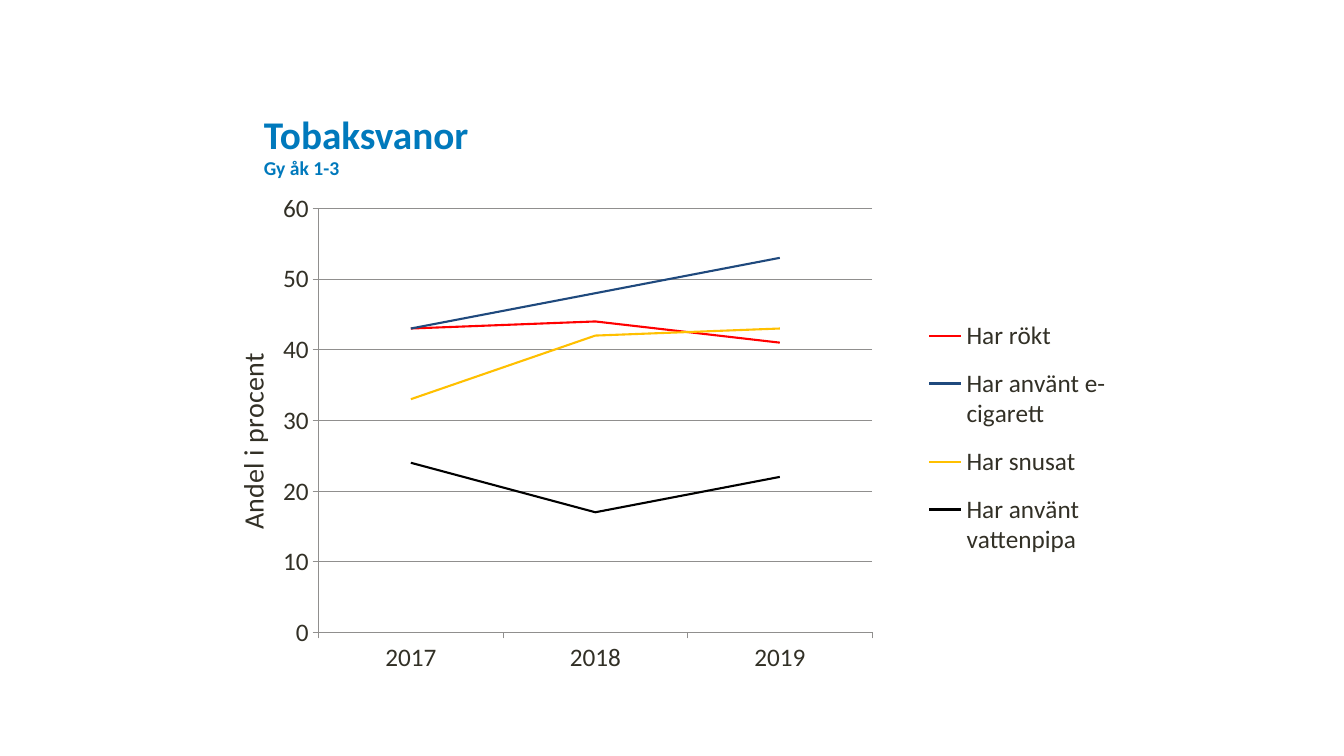
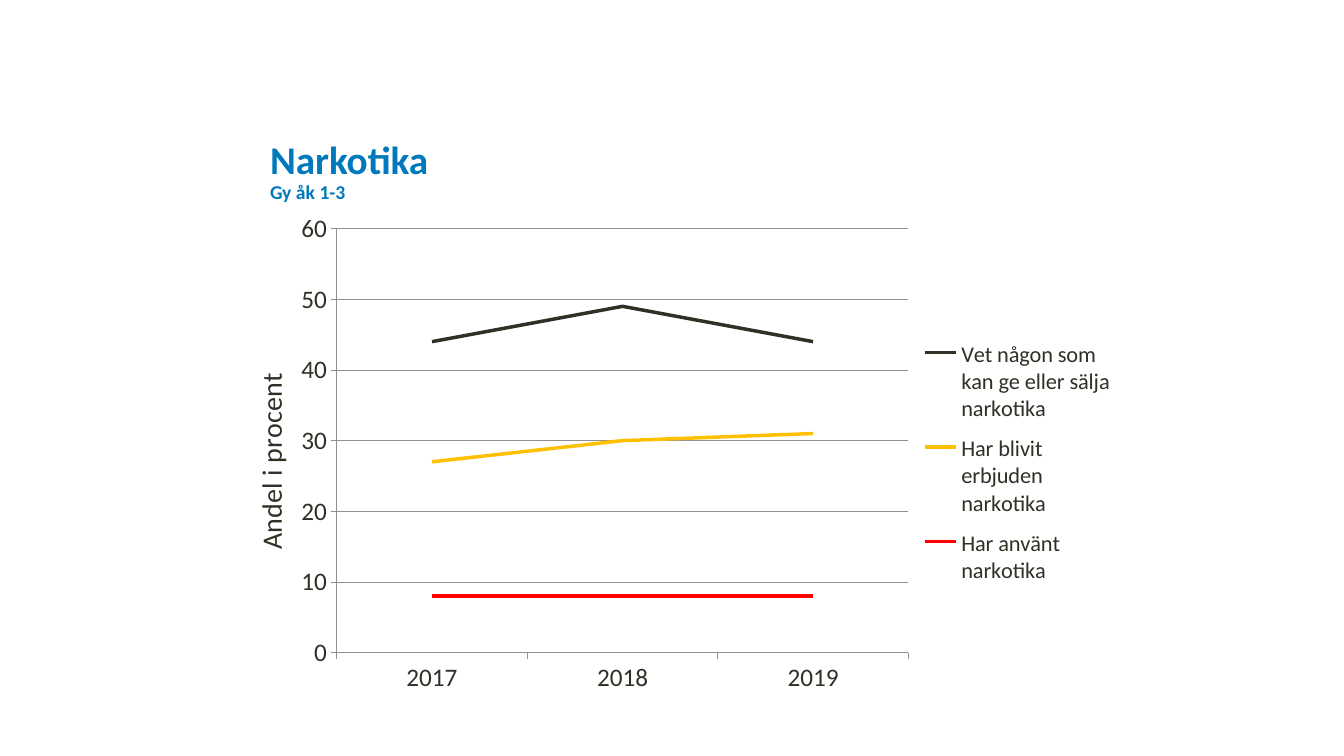
from dataclasses import dataclass

from lxml.etree import SubElement
from pptx import Presentation
from pptx.chart.data import CategoryChartData
from pptx.dml.color import RGBColor
from pptx.enum.chart import XL_CHART_TYPE as ChartType
from pptx.enum.chart import XL_LEGEND_POSITION as LegendPosition
from pptx.enum.chart import XL_MARKER_STYLE as MarkerStyle
from pptx.enum.chart import XL_TICK_MARK as TickMark
from pptx.enum.text import MSO_ANCHOR as Anchor
from pptx.oxml import parse_xml
from pptx.oxml.ns import nsdecls, qn
from pptx.util import Inches, Pt

YEARS = ("2017", "2018", "2019")
SUBTITLE = "Gy åk 1-3"
AXIS_TITLE = "Andel i procent"


@dataclass(frozen=True)
class Theme:
    font: str = "Calibri"
    heading: str = "0079BC"
    text: str = "323026"
    grid: str = "908F8E"
    red: str = "FF0000"
    blue: str = "1F497D"
    yellow: str = "FFC000"
    black: str = "000000"
    title_size: int = 28
    subtitle_size: int = 14
    axis_size: int = 18
    axis_title_size: int = 20
    grid_width: float = 0.5


THEME = Theme()

# Positions inside a chart are fractions of the chart's size.
SLIDES = [
    {
        "title": "Tobaksvanor",
        "title_at": (2.52, 0.58, 9, 1.25),
        "chart_at": (2.17, 1.82, 9, 4.95),
        "plot": (0.11, 0.05, 0.61, 0.85),
        "axis_title": (0.01, 0.33),
        "legend": (0.78, 0.24, 0.2, 0.54),
        "legend_size": 18,
        "line_width": 1.5,
        "series": [
            ("Har rökt", (43, 44, 41), THEME.red),
            ("Har använt e-cigarett", (43, 48, 53), THEME.blue),
            ("Har snusat", (33, 42, 43), THEME.yellow),
            ("Har använt vattenpipa", (24, 17, 22), THEME.black),
        ],
    },
    {
        "title": "Narkotika",
        "title_at": (2.58, 0.82, 9, 1.25),
        "chart_at": (2.17, 2.07, 9, 4.95),
        "plot": (0.13, 0.04, 0.63, 0.85),
        "axis_title": (0.03, 0.32),
        "legend": (0.77, 0.24, 0.22, 0.54),
        "legend_size": 16,
        "line_width": 2.5,
        "series": [
            ("Vet någon som kan ge eller sälja narkotika", (44, 49, 44), THEME.text),
            ("Har blivit erbjuden narkotika", (27, 30, 31), THEME.yellow),
            ("Har använt narkotika", (8, 8, 8), THEME.red),
        ],
    },
]


def set_format(target, values):
    for name, value in values.items():
        setattr(target, name, value)


def set_font(font, size, color=THEME.text, bold=False):
    set_format(font, {"name": THEME.font, "size": Pt(size), "bold": bold})
    font.color.rgb = RGBColor.from_string(color)


def set_line(line, color, width):
    line.color.rgb = RGBColor.from_string(color)
    line.width = Pt(width)


def set_layout(element, index, place, inner=False):
    """Give a chart part a fixed place, as child number index of its element."""
    for old in element.findall(qn("c:layout")):
        element.remove(old)
    layout = parse_xml(f"<c:layout {nsdecls('c')}/>")
    manual = SubElement(layout, qn("c:manualLayout"))
    settings = [("layoutTarget", "inner")] if inner else []
    settings += [("xMode", "edge"), ("yMode", "edge")]
    settings += zip("xywh", place)
    for name, value in settings:
        SubElement(manual, qn(f"c:{name}")).set("val", str(value))
    element.insert(index, layout)


def add_title(slide, content):
    box = slide.shapes.add_textbox(*map(Inches, content["title_at"]))
    frame = box.text_frame
    set_format(frame, {"word_wrap": True, "vertical_anchor": Anchor.BOTTOM})
    lines = ((content["title"], THEME.title_size), (SUBTITLE, THEME.subtitle_size))
    for number, (text, size) in enumerate(lines):
        paragraph = frame.add_paragraph() if number else frame.paragraphs[0]
        paragraph.line_spacing = 0.9
        run = paragraph.add_run()
        run.text = text
        set_font(run.font, size, THEME.heading, bold=True)


def style_axes(chart, content):
    for axis in (chart.category_axis, chart.value_axis):
        axis.major_tick_mark = TickMark.OUTSIDE
        axis.minor_tick_mark = TickMark.NONE
        set_font(axis.tick_labels.font, THEME.axis_size)
        set_line(axis.format.line, THEME.grid, THEME.grid_width)
    value_axis = chart.value_axis
    set_format(value_axis, {"minimum_scale": 0, "maximum_scale": 60,
                            "major_unit": 10, "has_major_gridlines": True})
    set_line(value_axis.major_gridlines.format.line, THEME.grid, THEME.grid_width)
    title = value_axis.axis_title
    title.text_frame.text = AXIS_TITLE
    set_font(title.text_frame.paragraphs[0].runs[0].font, THEME.axis_title_size)
    title_element = value_axis._element.find(qn("c:title"))
    set_layout(title_element, 1, content["axis_title"])


def add_line_chart(slide, content):
    data = CategoryChartData()
    data.categories = YEARS
    for name, values, _ in content["series"]:
        data.add_series(name, values)
    chart = slide.shapes.add_chart(
        ChartType.LINE, *map(Inches, content["chart_at"]), data).chart
    set_format(chart, {"has_title": False, "has_legend": True})
    set_font(chart.font, THEME.axis_size)
    plot = chart.plots[0]
    plot.vary_by_categories = False
    for series, (_, _, color) in zip(plot.series, content["series"]):
        series.smooth = False
        series.marker.style = MarkerStyle.NONE
        set_line(series.format.line, color, content["line_width"])
    style_axes(chart, content)

    legend = chart.legend
    set_format(legend, {"position": LegendPosition.RIGHT, "include_in_layout": False})
    set_font(legend.font, content["legend_size"])
    set_layout(legend._element, 1, content["legend"])
    plot_area = chart._chartSpace.chart.plotArea
    set_layout(plot_area, 0, content["plot"], inner=True)


def main():
    presentation = Presentation()
    set_format(presentation, {"slide_width": Inches(13.33), "slide_height": Inches(7.5)})
    blank = presentation.slide_layouts[6]
    for content in SLIDES:
        slide = presentation.slides.add_slide(blank)
        add_title(slide, content)
        add_line_chart(slide, content)
    presentation.save("out.pptx")


if __name__ == "__main__":
    main()
